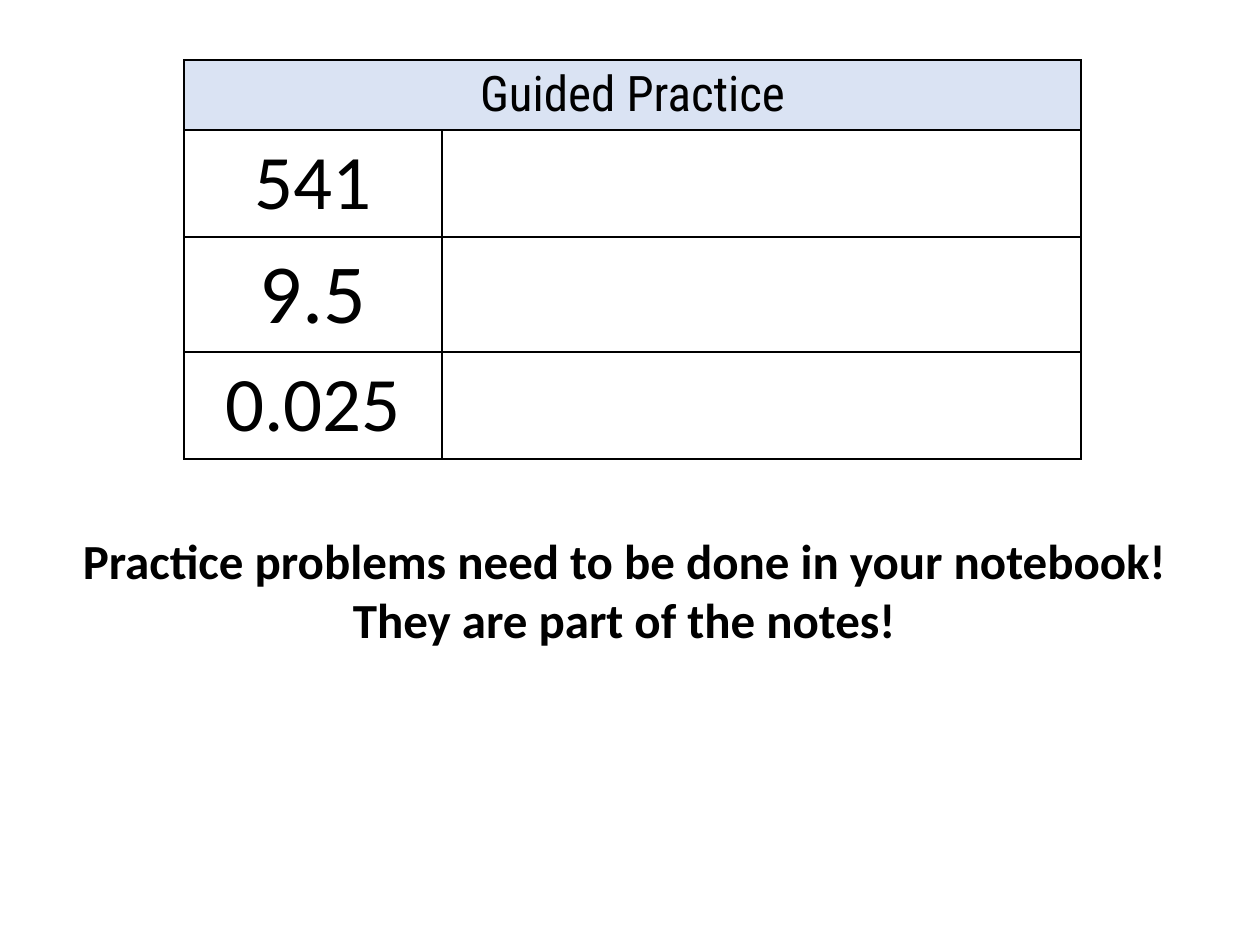
from pptx import Presentation
from pptx.dml.color import RGBColor
from pptx.enum.text import MSO_ANCHOR as Anchor, PP_ALIGN as Align
from pptx.oxml import parse_xml
from pptx.oxml.ns import nsdecls
from pptx.util import Pt

BLACK = RGBColor(0x00, 0x00, 0x00)
PALE_BLUE = RGBColor(0xDA, 0xE3, 0xF3)
EMU_PER_PX = 914400 / 126


def px(length):
    """Turn pixels into EMU."""
    return round(length * EMU_PER_PX)


class PracticeSlide:
    """Hold the text style and the current slide."""

    body_font = "Calibri"
    heading_font = "Roboto Condensed"

    def __init__(self, presentation):
        self.slide = presentation.slides.add_slide(presentation.slide_layouts[6])

    def add_text(self, frame, text, size, font=body_font, bold=False):
        """Put one centred run into a text frame."""
        paragraph = frame.paragraphs[0]
        paragraph.alignment = Align.CENTER
        run = paragraph.add_run()
        run.text = text
        run.font.name = font
        run.font.size = Pt(size)
        run.font.bold = bold
        run.font.color.rgb = BLACK

    def border(self, cell):
        """Draw a thin black line on each side of a cell."""
        properties = cell._tc.get_or_add_tcPr()
        for index, side in enumerate("LRTB"):
            line = parse_xml(
                f'<a:ln{side} {nsdecls("a")} w="{Pt(1)}"><a:solidFill>'
                f'<a:srgbClr val="{BLACK}"/></a:solidFill></a:ln{side}>'
            )
            properties.insert(index, line)

    def table(self, left, top, widths, heights, heading, problems):
        """Add a table with a merged heading and a blank answer column."""
        table = self.slide.shapes.add_table(
            len(heights), len(widths), px(left), px(top), px(sum(widths)), px(sum(heights))
        ).table
        table.first_row = table.horz_banding = False
        for column, width in zip(table.columns, widths):
            column.width = px(width)
        for row, height in zip(table.rows, heights):
            row.height = px(height)
        for cell in table.iter_cells():
            cell.vertical_anchor = Anchor.MIDDLE
            cell.fill.background()
            self.border(cell)

        title = table.cell(0, 0)
        title.merge(table.cell(0, len(widths) - 1))
        title.fill.solid()
        title.fill.fore_color.rgb = PALE_BLUE
        self.add_text(title.text_frame, heading, 28, self.heading_font)
        for row, (problem, size) in enumerate(problems, 1):
            self.add_text(table.cell(row, 0).text_frame, problem, size)

    def note(self, left, top, width, height, text):
        """Add a bold wrapped text box."""
        frame = self.slide.shapes.add_textbox(px(left), px(top), px(width), px(height)).text_frame
        frame.word_wrap = True
        self.add_text(frame, text, 28, bold=True)


def main():
    """Build and save the slide."""
    presentation = Presentation()
    presentation.slide_width = px(1260)
    presentation.slide_height = px(945)
    practice = PracticeSlide(presentation)
    practice.table(
        184, 60, [258, 639], [70, 107, 115, 107],
        "Guided Practice", [("541", 44), ("9.5", 48), ("0.025", 44)],
    )
    practice.note(
        60, 524, 1128, 131,
        "Practice problems need to be done in your notebook! They are part of the notes!",
    )
    presentation.save("out.pptx")


if __name__ == "__main__":
    main()
